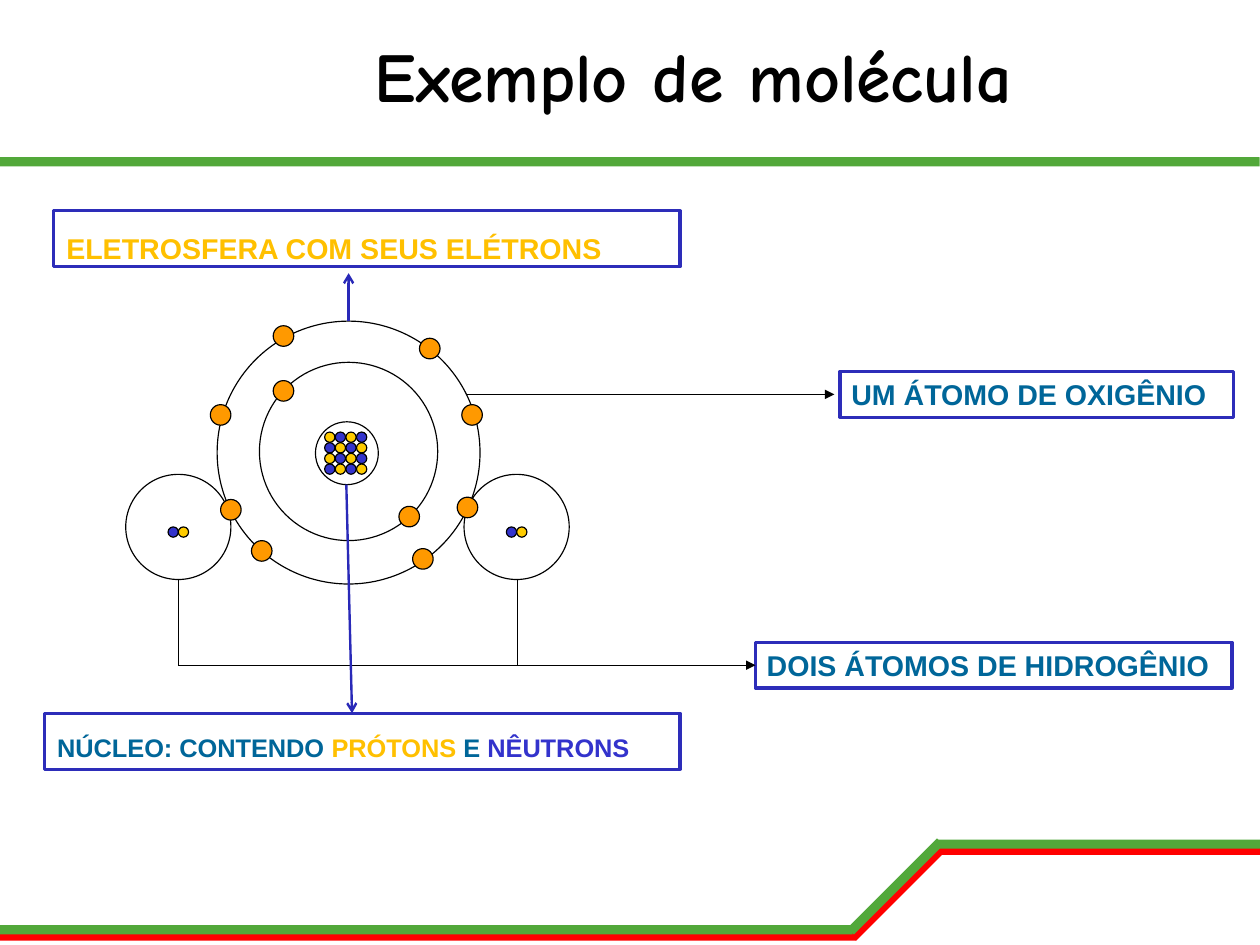
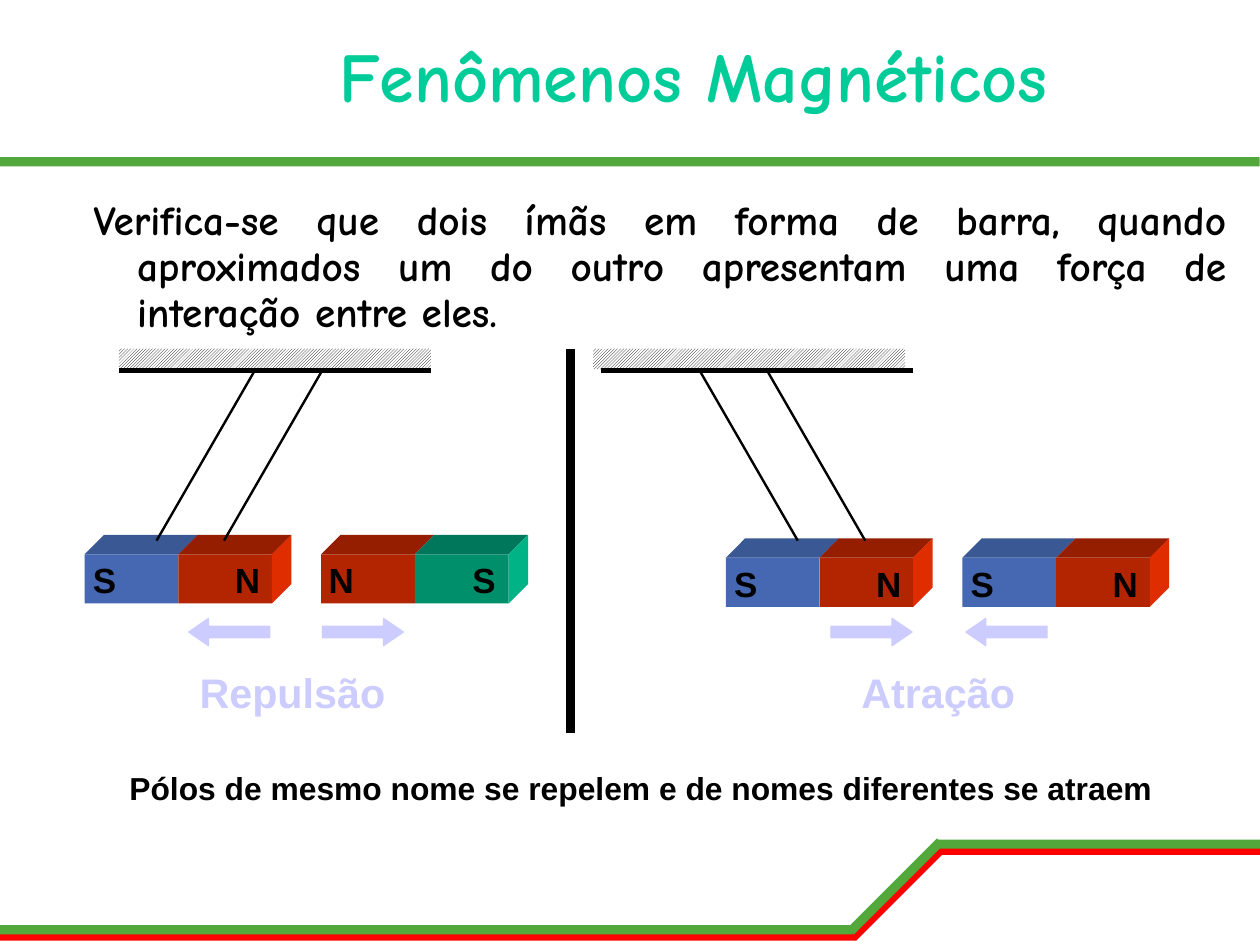
from dataclasses import dataclass

from lxml import etree
from pptx import Presentation
from pptx import util as u
from pptx.dml.color import RGBColor
from pptx.enum import dml, shapes, text
from pptx.oxml.ns import qn

CELL = u.Inches(0.1)  # one column or row of the drawing grid
SLIDE_WIDTH, SLIDE_HEIGHT = u.Cm(28), u.Cm(21)
COLORS = {
    "black": "000000", "white": "FFFFFF", "green": "52A83A", "red": "FF0000",
    "frame": "2D2DB9", "pointer": "2929B8", "teal": "006699", "amber": "FFC000",
    "neutron": "3333CC", "proton": "FFCC00", "electron": "FF9900",
    "mint": "00CC99", "lilac": "CCCCFF",
}
# Front, top and side of each magnet half
MAGNET_COLORS = {
    "blue": ("4668B2", "3A5894", "587FDC"),
    "red": ("B32400", "951E00", "E02D00"),
    "green": ("008F6B", "00775A", "00B386"),
}
PLAIN_TEXT = {"word_wrap": True, "auto_size": text.MSO_AUTO_SIZE.NONE}
MIDDLE = {"vertical_anchor": text.MSO_ANCHOR.MIDDLE}
NO_MARGINS = {"margin_left": 0, "margin_right": 0, "margin_top": 0, "margin_bottom": 0}
LOOSE_MARGINS = {"margin_left": u.Inches(0.11), "margin_right": u.Inches(0.11),
                 "margin_top": u.Inches(0.06), "margin_bottom": u.Inches(0.06)}
CENTERED = {"alignment": text.PP_ALIGN.CENTER}
LEFT = {"alignment": text.PP_ALIGN.LEFT}
TALL = {**LEFT, "line_spacing": 1.4}
DISPLAY_FONT = "Comic Neue"


@dataclass(frozen=True)
class Area:
    left: float
    top: float
    width: float
    height: float


@dataclass(frozen=True)
class Band:
    area: Area
    color: str
    angle: int = 0


@dataclass(frozen=True)
class Span:
    words: str
    color: str


@dataclass(frozen=True)
class Label:
    area: Area
    spans: tuple[Span, ...]
    size: int
    frame: dict
    para: dict


@dataclass(frozen=True)
class Line:
    start: tuple[float, float]
    end: tuple[float, float]
    color: str = "black"
    width: float = 0.75
    head: str = ""


@dataclass(frozen=True)
class Magnet:
    left: float
    top: float
    halves: tuple[tuple[str, str], ...]  # colour and pole


BANDS = (
    Band(Area(0, 81.5, 74.9, 0.8), "red"),
    Band(Area(73, 77.7, 11.1, 0.8), "red", 315),
    Band(Area(82, 74, 28.4, 0.8), "red"),
    Band(Area(0, 13.75, 110.2, 0.8), "green"),
    Band(Area(0, 80.95, 74.6, 0.8), "green"),
    Band(Area(72.8, 77.15, 11.1, 0.8), "green", 315),
    Band(Area(81.9, 73.45, 28.4, 0.8), "green"),
)


def cells(count: float) -> u.Emu:
    return u.Emu(round(CELL * count))


def place(area: Area) -> tuple[u.Emu, ...]:
    return tuple(map(cells, (area.left, area.top, area.width, area.height)))


def set_all(target, values: dict) -> None:
    for name, value in values.items():
        setattr(target, name, value)


def rgb(color: str) -> RGBColor:
    return RGBColor.from_string(COLORS.get(color, color))


def paint(shape, fill: str = "", line: str = "", width: float = 0.75) -> None:
    """Set fill and line, where an empty colour means none."""
    shape.shadow.inherit = False
    if fill:
        shape.fill.solid()
        shape.fill.fore_color.rgb = rgb(fill)
    else:
        shape.fill.background()
    if line:
        shape.line.color.rgb = rgb(line)
        shape.line.width = u.Pt(width)
    else:
        shape.line.fill.background()


def add_preset(page, kind, area: Area, fill: str = "", line: str = "", width: float = 0.75):
    shape = page.shapes.add_shape(kind, *place(area))
    paint(shape, fill, line, width)
    return shape


def add_dot(page, left: float, top: float, size: float, fill: str = "") -> None:
    add_preset(page, shapes.MSO_SHAPE.OVAL, Area(left, top, size, size), fill, "black")


def add_line(page, line: Line):
    connector = page.shapes.add_connector(
        shapes.MSO_CONNECTOR.STRAIGHT, *map(cells, (*line.start, *line.end)))
    connector.line.color.rgb = rgb(line.color)
    connector.line.width = u.Pt(line.width)
    properties = connector.element.spPr
    if line.head:
        outline = properties.find(qn("a:ln"))
        etree.SubElement(outline, qn("a:tailEnd"), type=line.head)
    etree.SubElement(properties, qn("a:effectLst"))
    return connector


def write(box, spans: tuple[Span, ...], size: int, font: str, frame: dict, para: dict) -> None:
    set_all(box.text_frame, {**PLAIN_TEXT, **frame})
    paragraph = box.text_frame.paragraphs[0]
    set_all(paragraph, para)
    for span in spans:
        run = paragraph.add_run()
        run.text = span.words
        set_all(run.font, {"name": font, "size": u.Pt(size), "bold": True})
        run.font.color.rgb = rgb(span.color)


def add_label(page, label: Label, framed: bool = False):
    if framed:
        box = add_preset(page, shapes.MSO_SHAPE.RECTANGLE, label.area, "white", "frame", 2)
    else:
        box = page.shapes.add_textbox(*place(label.area))
    write(box, label.spans, label.size, "Arial", label.frame, label.para)
    return box


def fill_placeholder(box, area: Area, span: Span, size: int, frame: dict, para: dict) -> None:
    set_all(box, dict(zip(("left", "top", "width", "height"), place(area))))
    write(box, (span,), size, DISPLAY_FONT, {**NO_MARGINS, **frame},
          {"space_before": u.Pt(0), "line_spacing": 0.93, **para})


def add_page(deck, layout: int, title: str, color: str):
    page = deck.slides.add_slide(deck.slide_layouts[layout])
    fill_placeholder(page.shapes.title, Area(11.1, 0, 99.2, 13.8), Span(title, color),
                     44, MIDDLE, CENTERED)
    return page


def move_bands_to_master(deck, page) -> None:
    for index, band in enumerate(BANDS):
        shape = add_preset(page, shapes.MSO_SHAPE.ROUNDED_RECTANGLE, band.area, band.color)
        shape.adjustments[0] = 0.02
        shape.rotation = band.angle
        shape.element.nvSpPr.cNvPr.set("id", str(100 + index))
        deck.slide_master.shapes.element.insert(2 + index, shape.element)


def draw_molecule(page) -> None:
    add_label(page, Label(Area(73.5, 32.5, 34.4, 4), (Span("UM ÁTOMO DE OXIGÊNIO", "teal"),),
                          18, MIDDLE, LEFT), framed=True)
    hydrogen = add_label(page, Label(
        Area(66.1, 56.2, 41.7, 4), (Span("DOIS ÁTOMOS DE HIDROGÊNIO", "teal"),),
        18, MIDDLE, LEFT), framed=True)
    branch = 58.2
    for column in (15.6, 45.3):
        add_line(page, Line((column, 50.7), (column, branch)))
    add_line(page, Line((15.6, branch), (66.1, branch), head="triangle")).end_connect(hydrogen, 1)
    add_line(page, Line((40.8, 34.5), (73, 34.5), head="triangle"))

    pitch, particle = 0.93, 0.9
    kinds = ("proton", "neutron")
    for row in range(4):
        for column in range(4):
            add_dot(page, 28.4 + column * pitch, 37.8 + row * pitch, particle,
                    kinds[(row + column) % 2])
    for left, top, size in ((27.6, 36.9, 5.5), (22.7, 31.7, 15.6), (19, 28.1, 23)):
        add_dot(page, left, top, size)
    for left in (11, 40.6):
        add_dot(page, left + 3.7, 46.1, particle, "neutron")
        add_dot(page, left + 4.6, 46.1, particle, "proton")
        add_dot(page, left, 41.5, 9.2)
    electrons = ((23.9, 33.3), (34.9, 44.3), (40.4, 35.4), (18.4, 35.4), (23.9, 28.5),
                 (36.7, 29.6), (36.1, 48), (22, 47.3), (40, 43.5), (19.3, 43.7))
    for left, top in electrons:
        add_dot(page, left, top, 1.8, "electron")

    nucleus = (Span("NÚCLEO: CONTENDO ", "teal"), Span("PRÓTONS", "amber"),
               Span(" E ", "teal"), Span("NÊUTRONS", "neutron"))
    shell = (Span("ELETROSFERA COM SEUS ELÉTRONS", "amber"),)
    top_anchor = {**LOOSE_MARGINS, "vertical_anchor": text.MSO_ANCHOR.TOP}
    for label in (Label(Area(3.9, 62.4, 55.6, 4.9), nucleus, 16, top_anchor, TALL),
                  Label(Area(4.7, 18.45, 54.8, 4.9), shell, 18, top_anchor, TALL)):
        add_label(page, label, framed=True)
    for start, end in (((30.3, 42.4), (30.8, 62.4)), ((30.5, 28.1), (30.5, 23.9))):
        add_line(page, Line(start, end, "pointer", 1.5, "arrow"))


def add_face(page, corners: list[tuple[float, float]], color: str) -> None:
    points = [(cells(x), cells(y)) for x, y in corners]
    builder = page.shapes.build_freeform(*points[0])
    builder.add_line_segments(points[1:], close=True)
    paint(builder.convert_to_shape(), color)


def add_magnet(page, magnet: Magnet) -> None:
    """Draw a two-coloured bar in oblique view, with its pole letters."""
    width, height, depth = 8.2, 4.3, 1.7
    top, back = magnet.top, magnet.top - depth
    for index, (color, pole) in enumerate(magnet.halves):
        front, lid, side = MAGNET_COLORS[color]
        left = magnet.left + index * width
        right = left + width
        add_preset(page, shapes.MSO_SHAPE.RECTANGLE, Area(left, top, width, height), front)
        add_face(page, [(left, top), (left + depth, back), (right + depth, back),
                        (right, top)], lid)
        if index == len(magnet.halves) - 1:
            add_face(page, [(right, top), (right + depth, back),
                            (right + depth, back + height), (right, top + height)], side)
        add_label(page, Label(Area(magnet.left - 1.1 + index * 12.5, top - 0.1, 5.7, 4.8),
                              (Span(pole, "black"),), 22, {}, CENTERED))


def add_support(page, hatch_left: float, beam_left: float,
                threads: tuple[float, float], swing: float) -> None:
    """Draw a hatched ceiling with two threads that lean sideways by swing."""
    width, beam = 27.3, 32.4
    hatch = add_preset(page, shapes.MSO_SHAPE.RECTANGLE, Area(hatch_left, 30.5, width, 1.8))
    hatch.fill.patterned()
    hatch.fill.pattern = dml.MSO_PATTERN.LIGHT_UPWARD_DIAGONAL
    hatch.fill.fore_color.rgb = rgb("black")
    hatch.fill.back_color.rgb = rgb("white")
    add_line(page, Line((beam_left, beam), (beam_left + width, beam), width=3))
    for column in threads:
        add_line(page, Line((column, beam), (column + swing, 47.3), width=1.5))


def draw_magnets(page) -> None:
    body = page.placeholders[1]
    properties = body.text_frame.paragraphs[0]._p.get_or_add_pPr()
    hanging = {"marL": u.Inches(0.38), "indent": -u.Inches(0.38)}
    for name, value in hanging.items():
        properties.set(name, str(value))
    etree.SubElement(properties, qn("a:buNone"))
    sentence = ("Verifica-se que dois ímãs em forma de barra, quando aproximados um do outro "
                "apresentam uma força de interação entre eles.")
    fill_placeholder(body, Area(8.2, 17.1, 99.2, 54.5), Span(sentence, "black"), 26,
                     {"margin_top": u.Inches(0.03)},
                     {"alignment": text.PP_ALIGN.JUSTIFY, "space_after": u.Pt(14.2)})

    south, north = ("blue", "S"), ("red", "N")
    for magnet in (Magnet(7.4, 48.5, (south, north)),
                   Magnet(28.1, 48.5, (north, ("green", "S"))),
                   Magnet(63.5, 48.8, (south, north)),
                   Magnet(84.2, 48.8, (south, north))):
        add_magnet(page, magnet)
    add_support(page, 10.4, 10.4, (22.3, 28.2), -8.6)
    add_support(page, 51.9, 52.6, (61.2, 67.1), 8.6)
    add_line(page, Line((49.9, 30.5), (49.9, 64.1), width=6))

    left_arrow, right_arrow = shapes.MSO_SHAPE.LEFT_ARROW, shapes.MSO_SHAPE.RIGHT_ARROW
    for kind, left in ((left_arrow, 16.5), (right_arrow, 28.2),
                       (right_arrow, 72.7), (left_arrow, 84.5)):
        arrow = add_preset(page, kind, Area(left, 54.1, 7.1, 2.4), "lilac", "lilac")
        arrow.adjustments[0], arrow.adjustments[1] = 0.42, 0.73
    for words, left in (("Repulsão", 9.6), ("Atração", 66.1)):
        add_label(page, Label(Area(left, 57.85, 32, 5.5), (Span(words, "lilac"),),
                              26, {}, CENTERED))
    rule = "Pólos de mesmo nome se repelem e de nomes diferentes se atraem"
    add_label(page, Label(Area(2, 66.65, 108.2, 4.5), (Span(rule, "black"),),
                          20, LOOSE_MARGINS, CENTERED))


def main() -> None:
    deck = Presentation()
    deck.slide_width = SLIDE_WIDTH
    deck.slide_height = SLIDE_HEIGHT
    molecule = add_page(deck, 5, "Exemplo de molécula", "black")
    move_bands_to_master(deck, molecule)
    draw_molecule(molecule)
    draw_magnets(add_page(deck, 1, "Fenômenos Magnéticos", "mint"))
    deck.save("out.pptx")


if __name__ == "__main__":
    main()
